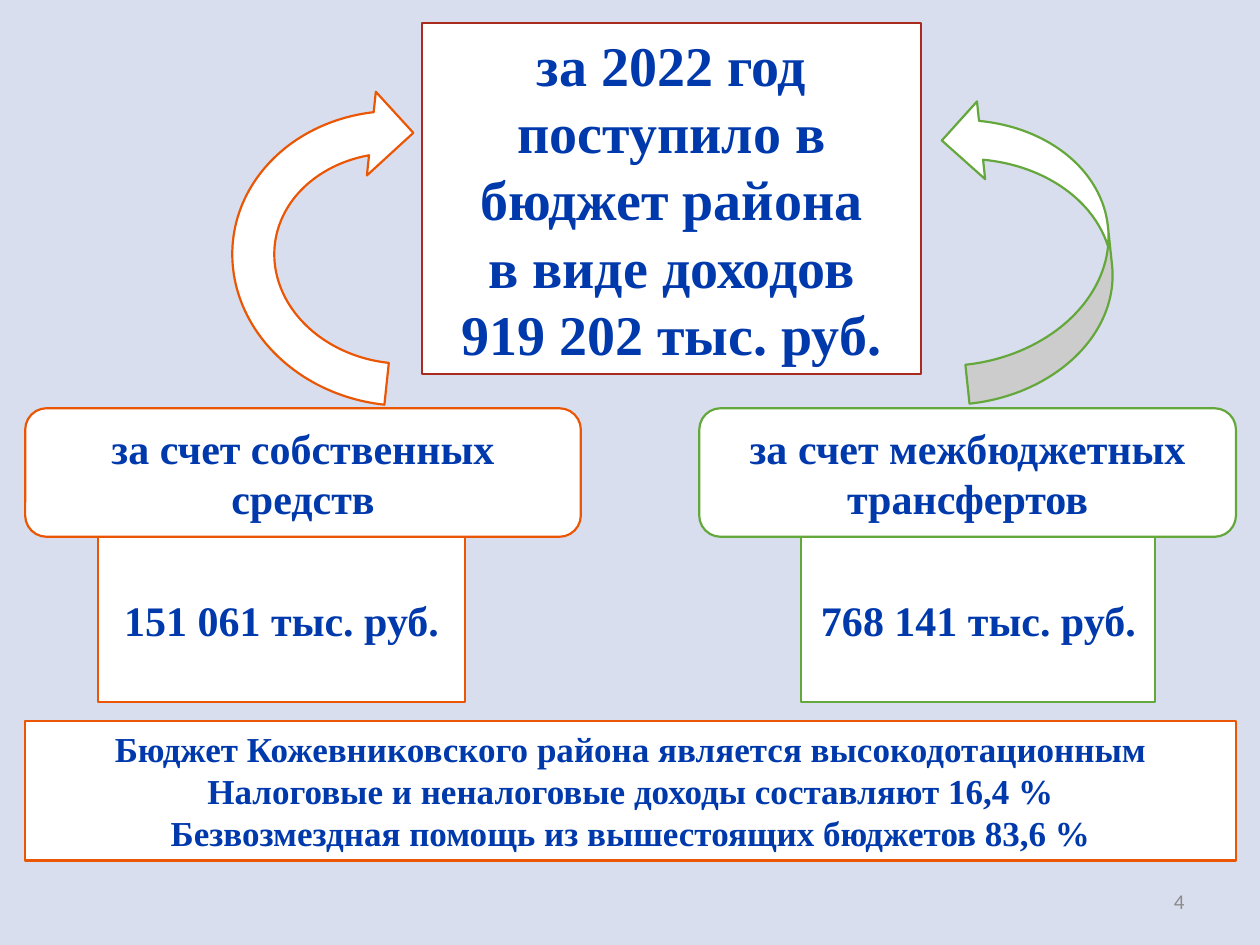
from dataclasses import dataclass

from pptx import Presentation
from pptx.dml.color import RGBColor as Rgb
from pptx.enum.shapes import MSO_SHAPE as Shape
from pptx.enum.text import MSO_ANCHOR as Anchor, PP_ALIGN as Align
from pptx.util import Inches, Pt


@dataclass(frozen=True)
class Theme:
    back: str = "D8DEED"
    fill: str = "FFFFFF"
    ink: str = "0039AC"
    grey: str = "8C8C8C"
    red: str = "AA2B1E"
    orange: str = "EB5605"
    green: str = "64A73B"
    serif: str = "Times New Roman"
    sans: str = "Calibri"
    title: int = 32
    label: int = 24
    note: int = 20
    number: int = 12
    line: float = 1.25


def write(frame, text, *, size, color, font, bold=True, align=Align.CENTER):
    """Fill a text frame, one paragraph for each line of text."""
    frame.word_wrap = True
    frame.vertical_anchor = Anchor.MIDDLE
    for i, line in enumerate(text.split("\n")):
        para = frame.paragraphs[0] if i == 0 else frame.add_paragraph()
        para.alignment = align
        run = para.add_run()
        run.text = line
        run.font.name = font
        run.font.size = Pt(size)
        run.font.bold = bold
        run.font.color.rgb = Rgb.from_string(color)


class Board:
    def __init__(self, slide, theme):
        self.slide = slide
        self.theme = theme
        fill = slide.background.fill
        fill.solid()
        fill.fore_color.rgb = Rgb.from_string(theme.back)

    def shape(self, kind, area, color):
        item = self.slide.shapes.add_shape(kind, *map(Inches, area))
        item.shadow.inherit = False
        item.fill.solid()
        item.fill.fore_color.rgb = Rgb.from_string(self.theme.fill)
        item.line.color.rgb = Rgb.from_string(color)
        item.line.width = Pt(self.theme.line)
        return item

    def box(self, text, area, color, size, kind=Shape.RECTANGLE):
        item = self.shape(kind, area, color)
        write(item.text_frame, text, size=size, color=self.theme.ink,
              font=self.theme.serif)

    def arrow(self, kind, area, color, turn):
        self.shape(kind, area, color).rotation = turn

    def number(self, text, area):
        item = self.slide.shapes.add_textbox(*map(Inches, area))
        write(item.text_frame, text, size=self.theme.number,
              color=self.theme.grey, font=self.theme.sans, bold=False,
              align=Align.RIGHT)


def main():
    deck = Presentation()
    deck.slide_width, deck.slide_height = Inches(10), Inches(7.5)
    theme = Theme()
    board = Board(deck.slides.add_slide(deck.slide_layouts[6]), theme)

    # Page number
    board.number("4", (7.17, 6.95, 2.33, 0.4))

    # Summary and total income
    board.box("Бюджет Кожевниковского района является высокодотационным "
              "Налоговые и неналоговые доходы составляют 16,4 %\n"
              "Безвозмездная помощь из вышестоящих бюджетов 83,6 %",
              (0.2, 5.72, 9.61, 1.11), theme.orange, theme.note)
    board.box("за 2022 год\nпоступило в бюджет района\n"
              "в виде доходов\n919 202 тыс. руб.",
              (3.35, 0.18, 3.96, 2.79), theme.red, theme.title)

    # Income sources: label above its amount
    top, high = 3.24, 1.02
    sources = [
        ("за счет собственных средств", 0.2, 4.41,
         "151 061 тыс. руб.", 0.78, 2.91, theme.orange),
        ("за счет межбюджетных трансфертов", 5.55, 4.26,
         "768 141 тыс. руб.", 6.36, 2.81, theme.green),
    ]
    for label, left, wide, amount, inner, span, color in sources:
        board.box(label, (left, top, wide, high), color, theme.label,
                  Shape.ROUNDED_RECTANGLE)
        board.box(amount, (inner, top + high, span, 1.31), color, theme.label)

    # Arrows from the sources to the total
    board.arrow(Shape.CIRCULAR_ARROW, (1.84, 0.55, 2.67, 3), theme.orange,
                276.1)
    board.arrow(Shape.CURVED_UP_ARROW, (6.98, 1.32, 2.41, 1.24), theme.green,
                264)

    deck.save("out.pptx")


if __name__ == "__main__":
    main()
